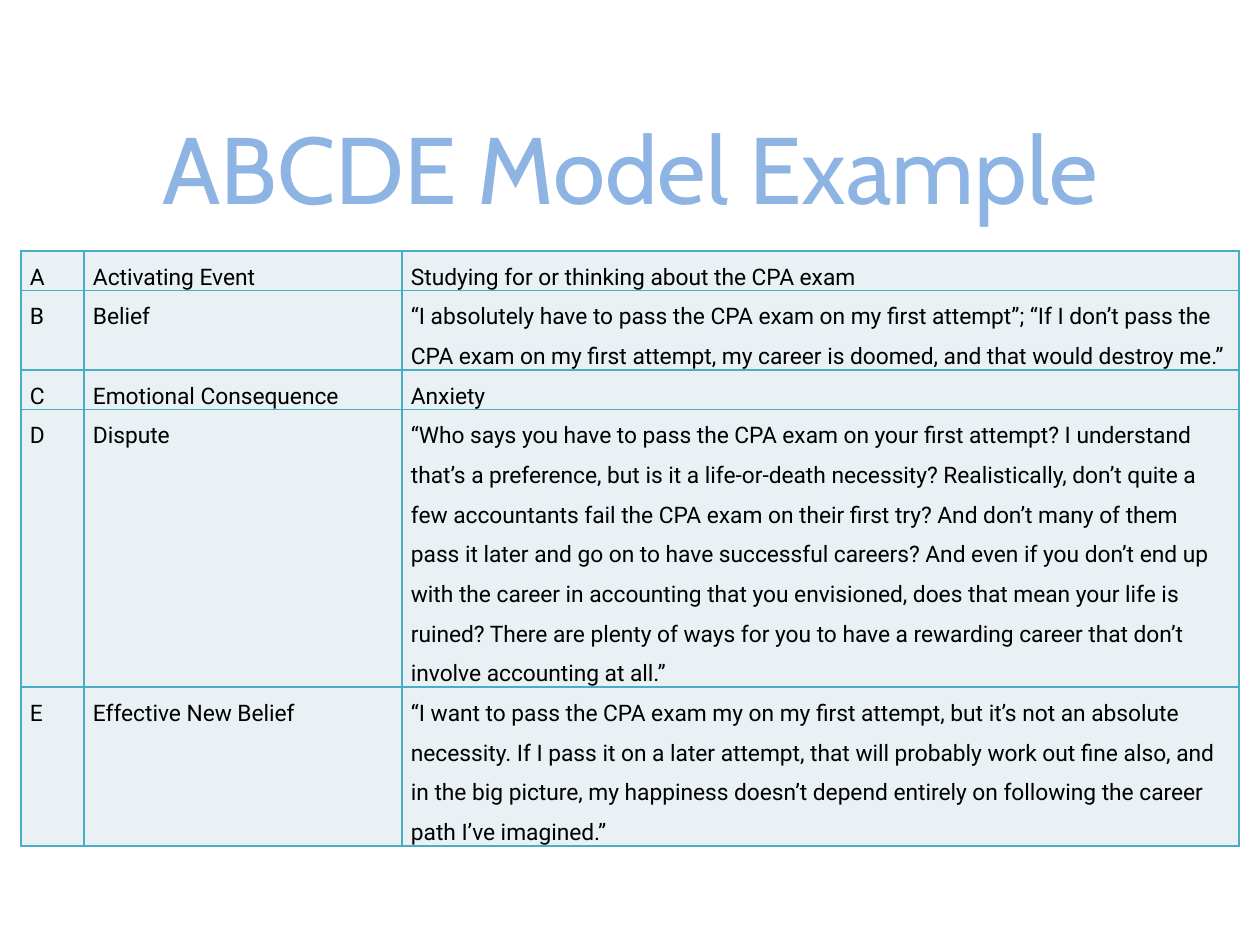
import dataclasses

import pptx
import pptx.dml.color
import pptx.enum.text
import pptx.oxml
import pptx.oxml.ns
import pptx.util

EMU_PER_PX = 914400 / 126
TITLE_ONLY = 5


def px(length):
    return pptx.util.Emu(round(length * EMU_PER_PX))


@dataclasses.dataclass(frozen=True)
class Theme:
    title_font: str = "Cabin"
    body_font: str = "Roboto"
    title_size: int = 54
    body_size: int = 13
    title_color: str = "8EB4E3"
    body_color: str = "000000"
    cell_fill: str = "E9F1F5"
    border_color: str = "4BACC6"
    border_width: int = 1
    line_spacing: float = 1.5


class SlideBuilder:
    def __init__(self, slide, theme):
        self.slide = slide
        self.theme = theme

    def style(self, paragraph, font_name, size, color):
        for run in paragraph.runs:
            run.font.name = font_name
            run.font.size = pptx.util.Pt(size)
            run.font.color.rgb = pptx.dml.color.RGBColor.from_string(color)

    def title(self, text, left, top, width, height):
        heading = self.slide.shapes.title
        heading.left, heading.top = px(left), px(top)
        heading.width, heading.height = px(width), px(height)
        frame = heading.text_frame
        frame.text = text
        frame.vertical_anchor = pptx.enum.text.MSO_ANCHOR.MIDDLE
        paragraph = frame.paragraphs[0]
        paragraph.alignment = pptx.enum.text.PP_ALIGN.CENTER
        self.style(paragraph, self.theme.title_font, self.theme.title_size,
                   self.theme.title_color)

    def table(self, rows, left, top, column_widths, row_heights):
        table = self.slide.shapes.add_table(
            len(rows), len(column_widths), px(left), px(top),
            px(sum(column_widths)), px(sum(row_heights))).table
        table.first_row = False
        table.horz_banding = False
        for column, width in zip(table.columns, column_widths):
            column.width = px(width)
        for row, height, texts in zip(table.rows, row_heights, rows):
            row.height = px(height)
            for cell, text in zip(row.cells, texts):
                self.cell(cell, text)

    def cell(self, cell, text):
        cell.margin_left = cell.margin_right = px(9)
        cell.margin_top = cell.margin_bottom = 0
        cell.text_frame.text = text
        paragraph = cell.text_frame.paragraphs[0]
        paragraph.line_spacing = self.theme.line_spacing
        self.style(paragraph, self.theme.body_font, self.theme.body_size,
                   self.theme.body_color)
        self.borders(cell)
        cell.fill.solid()
        cell.fill.fore_color.rgb = pptx.dml.color.RGBColor.from_string(
            self.theme.cell_fill)

    def borders(self, cell):
        """Line all four sides; must run before the cell gets its fill."""
        properties = cell._tc.get_or_add_tcPr()
        width = pptx.util.Pt(self.theme.border_width)
        for side in ("lnL", "lnR", "lnT", "lnB"):
            properties.append(pptx.oxml.parse_xml(
                f'<a:{side} {pptx.oxml.ns.nsdecls("a")} w="{width}"><a:solidFill>'
                f'<a:srgbClr val="{self.theme.border_color}"/>'
                f'</a:solidFill></a:{side}>'))


ABCDE_STEPS = [
    ("A", "Activating Event", "Studying for or thinking about the CPA exam"),
    ("B", "Belief",
     "“I absolutely have to pass the CPA exam on my first attempt”; “If I don’t "
     "pass the CPA exam on my first attempt, my career is doomed, and that would "
     "destroy me.”"),
    ("C", "Emotional Consequence", "Anxiety"),
    ("D", "Dispute",
     "“Who says you have to pass the CPA exam on your first attempt? I understand "
     "that’s a preference, but is it a life-or-death necessity? Realistically, "
     "don’t quite a few accountants fail the CPA exam on their first try? And "
     "don’t many of them pass it later and go on to have successful careers? And "
     "even if you don’t end up with the career in accounting that you envisioned, "
     "does that mean your life is ruined? There are plenty of ways for you to have "
     "a rewarding career that don’t involve accounting at all.”"),
    ("E", "Effective New Belief",
     "“I want to pass the CPA exam my on my first attempt, but it’s not an "
     "absolute necessity. If I pass it on a later attempt, that will probably work "
     "out fine also, and in the big picture, my happiness doesn’t depend entirely "
     "on following the career path I’ve imagined.”"),
]


def main():
    presentation = pptx.Presentation()
    presentation.slide_width, presentation.slide_height = px(1260), px(945)
    slide = presentation.slides.add_slide(presentation.slide_layouts[TITLE_ONLY])
    builder = SlideBuilder(slide, Theme())
    builder.title("ABCDE Model Example", 63, 88, 1134, 158)
    builder.table(ABCDE_STEPS, 21, 251, column_widths=(63, 318, 837),
                  row_heights=(35, 76, 35, 237, 116))
    presentation.save("out.pptx")


if __name__ == "__main__":
    main()
